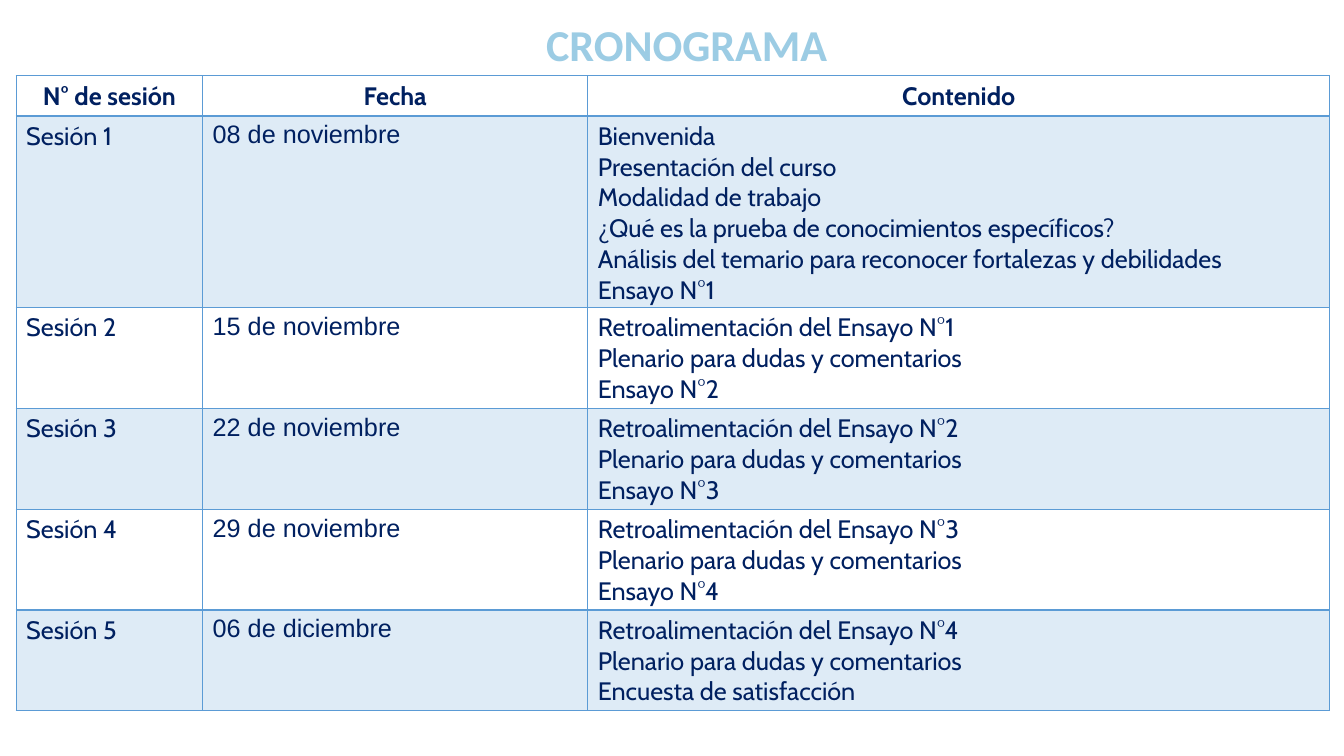
import pptx
import pptx.dml.color
import pptx.enum.text
import pptx.oxml
import pptx.oxml.ns
import pptx.util
from pptx.util import Inches

TITLE = "CRONOGRAMA"
HEADERS = ["N° de sesión", "Fecha", "Contenido"]
PLENARY = "Plenario para dudas y comentarios"
SESSIONS = [
    ("Sesión 1", "08 de noviembre", [
        "Bienvenida",
        "Presentación del curso",
        "Modalidad de trabajo",
        "¿Qué es la prueba de conocimientos específicos?",
        "Análisis del temario para reconocer fortalezas y debilidades",
        "Ensayo N°1",
    ]),
    ("Sesión 2", "15 de noviembre", ["Retroalimentación del Ensayo N°1", PLENARY, "Ensayo N°2"]),
    ("Sesión 3", "22 de noviembre", ["Retroalimentación del Ensayo N°2", PLENARY, "Ensayo N°3"]),
    ("Sesión 4", "29 de noviembre", ["Retroalimentación del Ensayo N°3", PLENARY, "Ensayo N°4"]),
    ("Sesión 5", "06 de diciembre",
     ["Retroalimentación del Ensayo N°4", PLENARY, "Encuesta de satisfacción"]),
]
COLUMN_WIDTHS = [1.85, 3.82, 7.36]
ROW_HEIGHTS = [0.4, 1.9] + [1.0] * 4
THEME = {
    "title_font": "Calibri", "title_size": 31.5, "title_color": "9CCCE4",
    "text_font": "Cabin", "date_font": "Arial", "text_size": 18, "text_color": "002060",
    "accent": "5B9BD5", "band_opacity": 20, "border": 1, "header_border": 2,
}


def style_paragraph(paragraph, font, size, color, bold=False, centered=False):
    alignment = pptx.enum.text.PP_ALIGN
    paragraph.alignment = alignment.CENTER if centered else alignment.LEFT
    for run in paragraph.runs:
        run.font.name = font
        run.font.size = pptx.util.Pt(size)
        run.font.bold = bold
        run.font.color.rgb = pptx.dml.color.RGBColor.from_string(color)


def fill_cell(cell, banded):
    if not banded:
        cell.fill.background()
        return
    cell.fill.solid()
    cell.fill.fore_color.rgb = pptx.dml.color.RGBColor.from_string(THEME["accent"])
    color = cell._tc.tcPr.find(".//" + pptx.oxml.ns.qn("a:srgbClr"))
    color.append(pptx.oxml.parse_xml(
        f'<a:alpha {pptx.oxml.ns.nsdecls("a")} val="{THEME["band_opacity"] * 1000}"/>'))


def border_cell(cell, row):
    """Line all four sides, with a heavier line under the header row."""
    heavy_side = {0: "B", 1: "T"}.get(row)
    for position, side in enumerate("LRTB"):
        points = THEME["header_border" if side == heavy_side else "border"]
        cell._tc.tcPr.insert(position, pptx.oxml.parse_xml(
            f'<a:ln{side} {pptx.oxml.ns.nsdecls("a")} w="{pptx.util.Pt(points)}">'
            f'<a:solidFill><a:srgbClr val="{THEME["accent"]}"/></a:solidFill></a:ln{side}>'))


def add_title(slide):
    box = slide.shapes.add_textbox(Inches(1.06), Inches(0.19), Inches(11.5), Inches(0.55))
    frame = box.text_frame
    frame.word_wrap = True
    frame.vertical_anchor = pptx.enum.text.MSO_ANCHOR.MIDDLE
    frame.text = TITLE
    frame.paragraphs[0].line_spacing = 0.9
    style_paragraph(frame.paragraphs[0], THEME["title_font"], THEME["title_size"],
                    THEME["title_color"], bold=True, centered=True)


def add_schedule(slide):
    rows = [HEADERS] + [(name, date, "\n".join(topics)) for name, date, topics in SESSIONS]
    table = slide.shapes.add_table(
        len(rows), len(HEADERS), Inches(0.16), Inches(0.75),
        Inches(sum(COLUMN_WIDTHS)), Inches(sum(ROW_HEIGHTS))).table
    for column, width in zip(table.columns, COLUMN_WIDTHS):
        column.width = Inches(width)
    for row, (texts, height) in enumerate(zip(rows, ROW_HEIGHTS)):
        table.rows[row].height = Inches(height)
        header = row == 0
        for column, text in enumerate(texts):
            cell = table.cell(row, column)
            cell.text_frame.text = text
            is_date = column == 1 and not header
            font = THEME["date_font" if is_date else "text_font"]
            for paragraph in cell.text_frame.paragraphs:
                style_paragraph(paragraph, font, THEME["text_size"], THEME["text_color"],
                                bold=header, centered=header)
            fill_cell(cell, banded=row % 2 == 1)
            border_cell(cell, row)


def main():
    presentation = pptx.Presentation()
    presentation.slide_width = Inches(13.33)
    presentation.slide_height = Inches(7.5)
    slide = presentation.slides.add_slide(presentation.slide_layouts[6])
    add_title(slide)
    add_schedule(slide)
    presentation.save("out.pptx")


if __name__ == "__main__":
    main()
